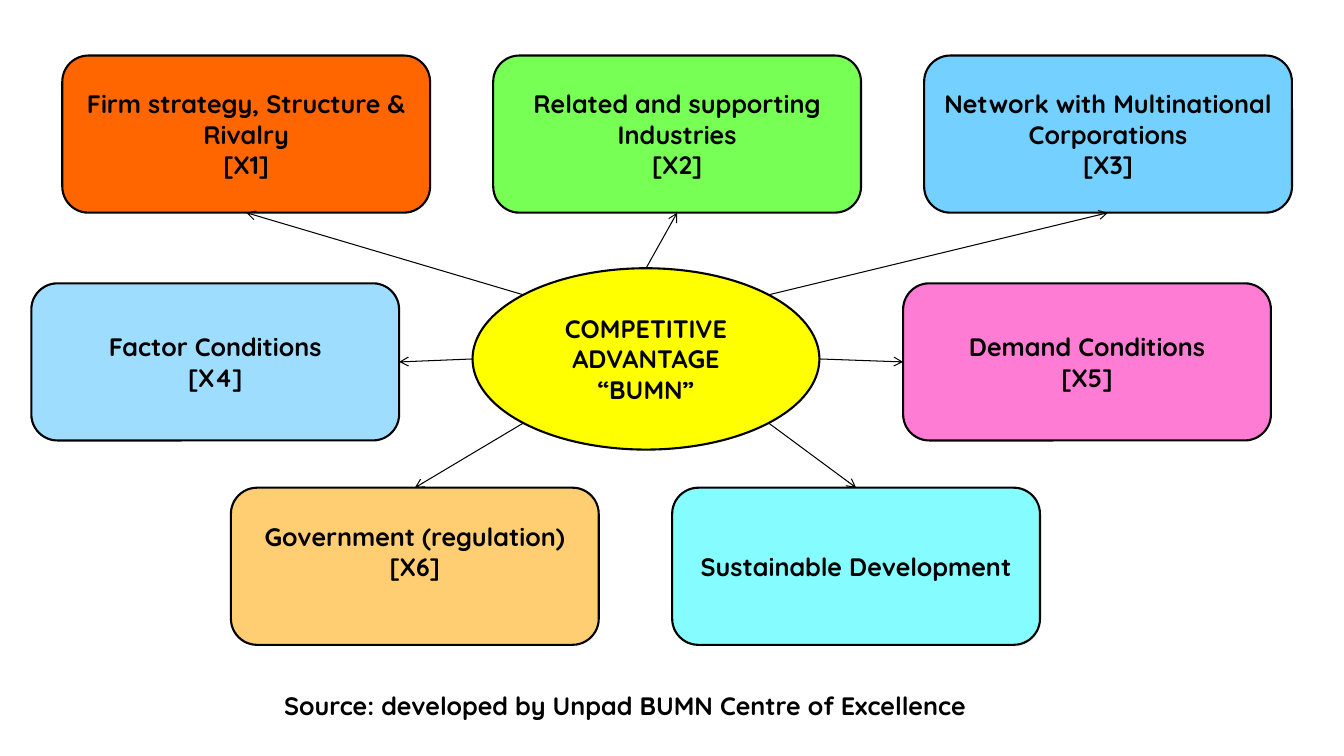
from math import cos, radians, sin

from lxml.etree import SubElement
from pptx import Presentation
from pptx.dml.color import RGBColor
from pptx.enum.shapes import MSO_CONNECTOR, MSO_SHAPE
from pptx.enum.text import MSO_ANCHOR, PP_ALIGN
from pptx.oxml.ns import qn
from pptx.util import Cm, Pt

COLOURS = {
    "ink": "000000",
    "strategy": "FF6600",
    "industries": "77FF55",
    "network": "74D0FF",
    "factor": "9FDDFF",
    "demand": "FF7CD4",
    "government": "FFCE72",
    "sustainable": "85FCFF",
    "centre": "FFFF00",
}
FONT = {"name": "Quicksand", "size": Pt(18), "bold": True}
FRAME = {"word_wrap": True, "vertical_anchor": MSO_ANCHOR.MIDDLE}
BOX_WIDTH, BOX_HEIGHT = 9.27, 3.96
ROW_TOPS = {"upper": 1.4, "middle": 7.14, "lower": 12.29}
UPPER_LEFT, UPPER_PITCH = 1.57, 10.86
CENTRE = (11.91, 6.76, 8.74, 4.57)
CAPTION = (1.07, 17.07, 29.36, 1.4)
SIDES = {"top": 0, "left": 1, "bottom": 2, "right": 3}

FACTORS = [
    ("strategy", ["Firm strategy, Structure & Rivalry", "[X1]"],
     UPPER_LEFT, "upper", "bottom", 225),
    ("industries", ["Related and supporting Industries", "[X2]"],
     UPPER_LEFT + UPPER_PITCH, "upper", "bottom", 270),
    ("network", ["Network with Multinational Corporations", "[X3]"],
     UPPER_LEFT + 2 * UPPER_PITCH, "upper", "bottom", 315),
    ("factor", ["Factor Conditions", "[X4]"], 0.79, "middle", "right", 180),
    ("demand", ["Demand Conditions", "[X5]"], 22.76, "middle", "left", 0),
    ("government", ["Government (regulation)", "[X6]"], 5.82, "lower", "top", 135),
    ("sustainable", ["Sustainable Development"], 16.94, "lower", "top", 45),
]


def rgb(name):
    return RGBColor.from_string(COLOURS[name])


def apply(target, values):
    for name, value in values.items():
        setattr(target, name, value)


def write_lines(shape, lines):
    frame = shape.text_frame
    apply(frame, FRAME)
    for index, line in enumerate(lines):
        para = frame.paragraphs[0] if index == 0 else frame.add_paragraph()
        para.alignment = PP_ALIGN.CENTER
        span = para.add_run()
        span.text = line
        apply(span.font, FONT)
        span.font.color.rgb = rgb("ink")


def add_node(page, kind, box, colour, lines):
    node = page.shapes.add_shape(kind, *map(Cm, box))
    node.shadow.inherit = False
    node.fill.solid()
    node.fill.fore_color.rgb = rgb(colour)
    node.line.color.rgb = rgb("ink")
    node.line.width = Pt(1.5)
    write_lines(node, lines)
    return node


def ellipse_point(box, angle):
    left, top, width, height = box
    return (
        Cm(left + width / 2 * (1 + cos(radians(angle)))),
        Cm(top + height / 2 * (1 + sin(radians(angle)))),
    )


def add_arrow(page, start, node, side):
    arrow = page.shapes.add_connector(MSO_CONNECTOR.STRAIGHT, *start, *start)
    arrow.end_connect(node, SIDES[side])
    arrow.line.color.rgb = rgb("ink")
    arrow.line.width = Pt(0.75)
    SubElement(arrow.line._get_or_add_ln(), qn("a:tailEnd"), type="arrow")
    SubElement(arrow._element.spPr, qn("a:effectLst"))


def add_diagram(page, centre):
    add_node(page, MSO_SHAPE.OVAL, centre, "centre", ["COMPETITIVE ADVANTAGE", "“BUMN”"])
    for colour, lines, left, row, side, angle in FACTORS:
        box = (left, ROW_TOPS[row], BOX_WIDTH, BOX_HEIGHT)
        node = add_node(page, MSO_SHAPE.ROUNDED_RECTANGLE, box, colour, lines)
        if colour == "government":
            node.text_frame.margin_bottom = Cm(0.89)
        add_arrow(page, ellipse_point(centre, angle), node, side)


def add_caption(page, box):
    caption = page.shapes.add_textbox(*map(Cm, box))
    write_lines(caption, ["Source: developed by Unpad BUMN Centre of Excellence"])


def main():
    deck = Presentation()
    apply(deck, {"slide_width": Cm(33.87), "slide_height": Cm(19.05)})
    page = deck.slides.add_slide(deck.slide_layouts[6])
    add_diagram(page, CENTRE)
    add_caption(page, CAPTION)
    deck.save("out.pptx")


if __name__ == "__main__":
    main()
